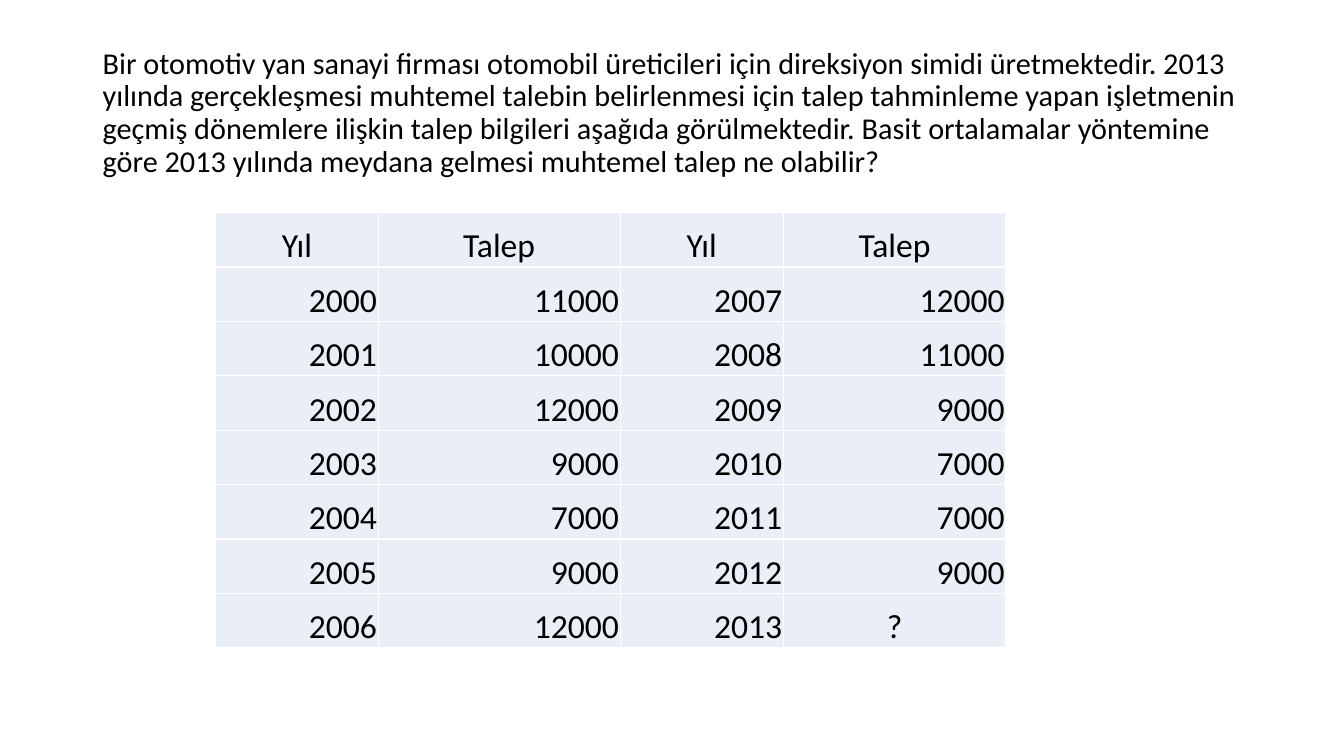
from lxml import etree
from pptx import Presentation
from pptx.dml.color import RGBColor
from pptx.enum.text import MSO_ANCHOR, PP_ALIGN
from pptx.oxml.ns import qn
from pptx.util import Cm, Pt

MIDDLE, BOTTOM = MSO_ANCHOR.MIDDLE, MSO_ANCHOR.BOTTOM
LEFT, CENTER, RIGHT = PP_ALIGN.LEFT, PP_ALIGN.CENTER, PP_ALIGN.RIGHT

BLACK, WHITE, PALE_BLUE = "000000", "FFFFFF", "EAEFF7"
BLANK_LAYOUT = 6
COLUMN_WIDTHS = [4.09, 6.1, 4.11, 5.61]
ROW_HEIGHT = 1.37
CELL_FORMAT = {
    "vertical_anchor": BOTTOM,
    "margin_left": Cm(0.03),
    "margin_right": Cm(0.03),
    "margin_top": Cm(0.03),
    "margin_bottom": Cm(0),
}
QUESTION = (
    "Bir otomotiv yan sanayi firması otomobil üreticileri için direksiyon simidi "
    "üretmektedir. 2013 yılında gerçekleşmesi muhtemel talebin belirlenmesi için "
    "talep tahminleme yapan işletmenin geçmiş dönemlere ilişkin talep bilgileri "
    "aşağıda görülmektedir. Basit ortalamalar yöntemine göre 2013 yılında meydana "
    "gelmesi muhtemel talep ne olabilir?"
)
FIRST_YEAR = 2000
DEMANDS = [11000, 10000, 12000, 9000, 7000, 9000, 12000,
           12000, 11000, 9000, 7000, 7000, 9000, "?"]


def color(value):
    return RGBColor.from_string(value)


def set_attributes(target, values):
    for name, value in values.items():
        setattr(target, name, value)


def write_text(text_frame, text, size, alignment):
    paragraph = text_frame.paragraphs[0]
    paragraph.alignment = alignment
    run = paragraph.add_run()
    run.text = text
    set_attributes(run.font, {"name": "Calibri", "size": Pt(size), "bold": False})
    run.font.color.rgb = color(BLACK)
    return paragraph


def add_question(slide):
    shape = slide.shapes.add_textbox(Cm(2.34), Cm(1.02), Cm(29.21), Cm(3.68))
    set_attributes(shape.text_frame, {"word_wrap": True, "vertical_anchor": MIDDLE})
    paragraph = write_text(shape.text_frame, QUESTION, 21.6, LEFT)
    paragraph.line_spacing = 0.9


def add_borders(cell):
    properties = cell._tc.get_or_add_tcPr()
    for side in ("a:lnL", "a:lnR", "a:lnT", "a:lnB"):
        line = etree.SubElement(properties, qn(side), w=str(Pt(1)))
        fill = etree.SubElement(line, qn("a:solidFill"))
        etree.SubElement(fill, qn("a:srgbClr"), val=WHITE)


def format_cell(cell, text):
    set_attributes(cell, CELL_FORMAT)
    add_borders(cell)
    cell.fill.solid()
    cell.fill.fore_color.rgb = color(PALE_BLUE)
    write_text(cell.text_frame, text, 24, RIGHT if text.isdigit() else CENTER)


def demand_rows():
    records = [(str(FIRST_YEAR + index), str(demand))
               for index, demand in enumerate(DEMANDS)]
    half = len(records) // 2
    pairs = zip(records[:half], records[half:])
    return [("Yıl", "Talep") * 2] + [first + second for first, second in pairs]


def add_demand_table(slide):
    rows = demand_rows()
    shape = slide.shapes.add_table(
        len(rows), len(COLUMN_WIDTHS), Cm(5.44), Cm(5.36),
        Cm(sum(COLUMN_WIDTHS)), Cm(ROW_HEIGHT * len(rows)))
    table = shape.table
    set_attributes(table, {"first_row": False, "horz_banding": False})
    for column, width in zip(table.columns, COLUMN_WIDTHS):
        column.width = Cm(width)
    for row, texts in zip(table.rows, rows):
        row.height = Cm(ROW_HEIGHT)
        for cell, text in zip(row.cells, texts):
            format_cell(cell, text)


def main():
    presentation = Presentation()
    set_attributes(presentation, {"slide_width": Cm(33.87), "slide_height": Cm(19.05)})
    slide = presentation.slides.add_slide(presentation.slide_layouts[BLANK_LAYOUT])
    add_question(slide)
    add_demand_table(slide)
    presentation.save("out.pptx")


if __name__ == "__main__":
    main()
